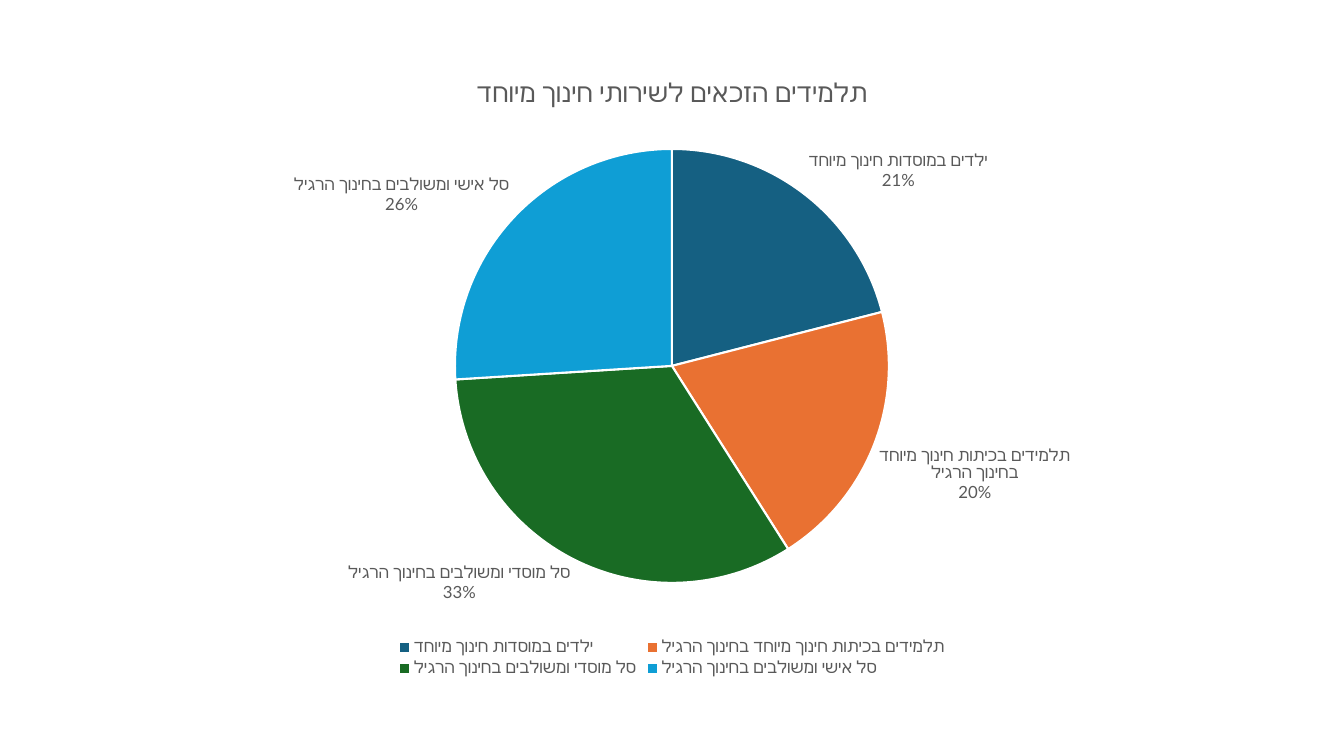
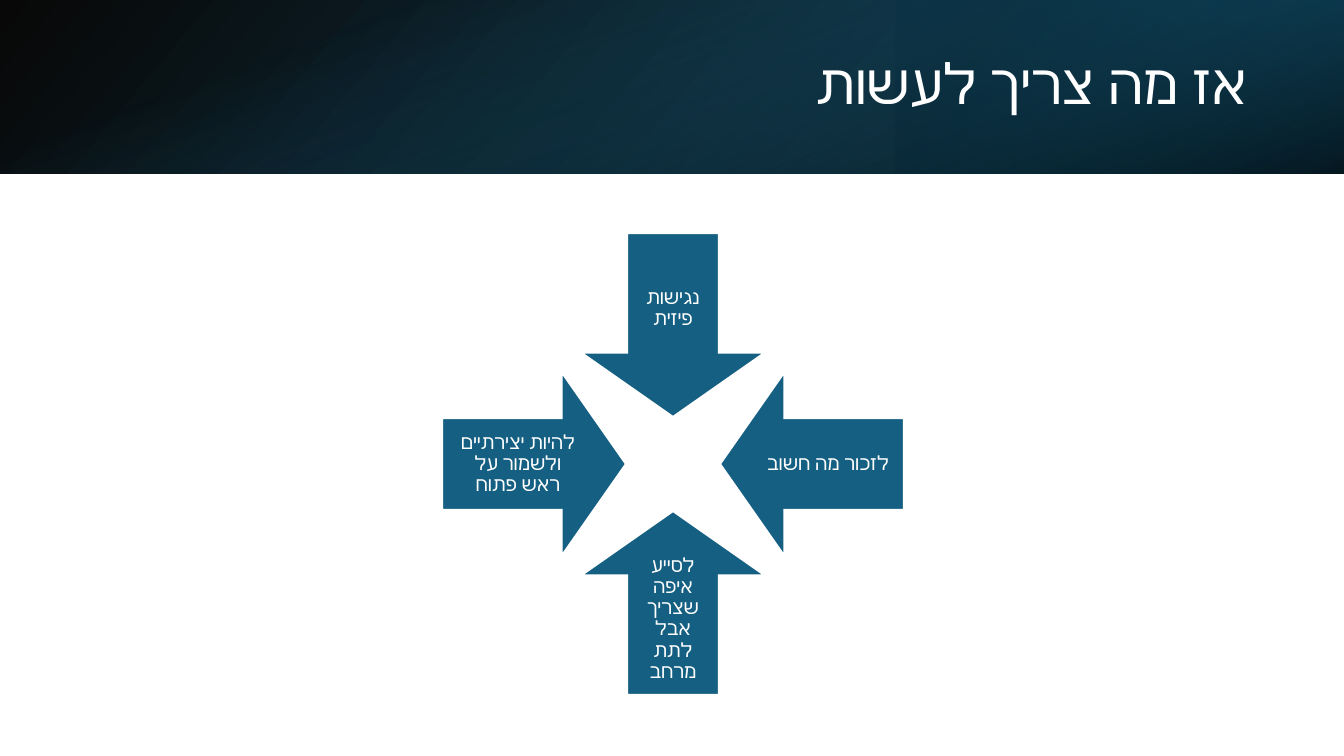
from pptx import Presentation
from pptx.chart.data import CategoryChartData
from pptx.dml.color import RGBColor
from pptx.enum.chart import XL_CHART_TYPE, XL_LABEL_POSITION, XL_LEGEND_POSITION
from pptx.enum.lang import MSO_LANGUAGE_ID
from pptx.enum.shapes import MSO_SHAPE
from pptx.enum.text import MSO_ANCHOR, MSO_AUTO_SIZE, PP_ALIGN
from pptx.oxml import parse_xml
from pptx.oxml.ns import nsdecls, qn
from pptx.util import Emu, Pt

FONT = "Lato"
TEAL, WHITE, GREY = "156082", "FFFFFF", "595959"


def px(*nums):
    """Turn pixels (100.8 to the inch) into EMU."""
    return [Emu(round(n * 914400 / 100.8)) for n in nums]


def hue(code):
    return RGBColor.from_string(code)


deck = Presentation()
deck.slide_width, deck.slide_height = px(1344, 756)

# Slide 1: pie chart
slide = deck.slides.add_slide(deck.slide_layouts[6])
head = "תלמידים הזכאים לשירותי חינוך מיוחד"
parts = [
    ("ילדים במוסדות חינוך מיוחד", 21, TEAL),
    ("תלמידים בכיתות חינוך מיוחד בחינוך הרגיל", 20, "E97132"),
    ("סל מוסדי ומשולבים בחינוך הרגיל", 33, "196B24"),
    ("סל אישי ומשולבים בחינוך הרגיל", 26, "0F9ED5"),
]
data = CategoryChartData()
data.categories = [name for name, _, _ in parts]
data.add_series(head, [value for _, value, _ in parts])
LEFT, TOP, WIDE, HIGH = 93, 56, 1159, 625
chart = slide.shapes.add_chart(
    XL_CHART_TYPE.PIE, *px(LEFT, TOP, WIDE, HIGH), data).chart

chart.has_title = chart.has_legend = True
chart.chart_title.include_in_layout = False
title = chart.chart_title.text_frame
title.text = head
chart.legend.position = XL_LEGEND_POSITION.BOTTOM
chart.legend.include_in_layout = False

plot = chart.plots[0]
plot.vary_by_categories = True
pie = plot.series[0]
for i, (_, _, code) in enumerate(parts):
    slice_ = pie.points[i].format
    slice_.fill.solid()
    slice_.fill.fore_color.rgb = hue(code)
    slice_.line.color.rgb = hue(WHITE)
    slice_.line.width = Pt(1.5)

# Place of the pie within the chart
place = {"x": (455 - LEFT) / WIDE, "y": (149 - TOP) / HIGH,
         "w": 434 / WIDE, "h": 434 / HIGH}
sizes = "".join(f'<c:{key} val="{value:.4f}"/>' for key, value in place.items())
area = chart.element.chart.plotArea
for old in area.findall(qn("c:layout")):
    area.remove(old)
area.insert(0, parse_xml(
    f'<c:layout {nsdecls("c")}><c:manualLayout><c:layoutTarget val="inner"/>'
    f'<c:xMode val="edge"/><c:yMode val="edge"/>{sizes}'
    f'</c:manualLayout></c:layout>'))

# Labels: name and share on separate lines
labels = pie.data_labels
marks = {"show_category_name": True, "show_percentage": True,
         "show_value": False, "show_legend_key": False,
         "position": XL_LABEL_POSITION.OUTSIDE_END}
for key, value in marks.items():
    setattr(labels, key, value)
for last in chart.element.iter(qn("c:showBubbleSize")):
    last.addnext(parse_xml(f"<c:separator {nsdecls('c')}>\n</c:separator>"))

fonts = [(chart.font, 10, "000000"), (labels.font, 12, GREY),
         (chart.legend.font, 12, GREY),
         (title.paragraphs[0].runs[0].font, 18.6, GREY)]
for font, size, code in fonts:
    font.name, font.size, font.bold = FONT, Pt(size), False
    font.color.rgb = hue(code)

# Slide 2: header band of three layered gradients
slide = deck.slides.add_slide(deck.slide_layouts[5])
shapes = slide.shapes
bands = [  # box, turn, flip, angle, stops of (place, colour, opacity)
    ((0, 0, 1344, 174), 0, 1, 140, [(0, "000000", 96), (100, "104862", 96)]),
    ((896, 0, 448, 174), 180, 1, 320, [(19, "0B3041", 68), (100, TEAL, 79)]),
    ((585, -585, 174, 1344), 90, 0, 340, [(23, TEAL, 0), (100, "000000", 74)]),
]
for box, turn, flip, angle, stops in bands:
    band = shapes.add_shape(MSO_SHAPE.RECTANGLE, *px(*box))
    band.rotation = turn
    band.shadow.inherit = False
    band.line.fill.background()
    props = band.element.spPr
    props.xfrm.set("flipH", str(flip))
    steps = "".join(
        f'<a:gs pos="{spot * 1000}"><a:srgbClr val="{code}">'
        f'<a:alpha val="{alpha * 1000}"/></a:srgbClr></a:gs>'
        for spot, code, alpha in stops)
    band.fill.gradient()
    props.replace(props.find(qn("a:gradFill")), parse_xml(
        f'<a:gradFill {nsdecls("a")} rotWithShape="1"><a:gsLst>{steps}'
        f'</a:gsLst><a:lin ang="{angle * 60000}" scaled="0"/></a:gradFill>'))

# Title lies above the band
title = shapes.title
title.left, title.top, title.width, title.height = px(151, 38, 1107, 97)
shapes.element.append(title.element)
texts = [(title, "אז מה צריך לעשות", 40, PP_ALIGN.RIGHT)]

# Four arrows pointing at the middle, each with its text box
MID_X, MID_Y, SIDE, REACH, SHIFT = 673, 464, 184, 139, 155
arrows = [  # direction from the middle, turn, words
    (0, -1, 0, "נגישות פיזית"),
    (1, 0, 90, "לזכור מה חשוב"),
    (0, 1, 180, "לסייע איפה שצריך אבל לתת מרחב"),
    (-1, 0, 270, "להיות יצירתיים ולשמור על ראש פתוח"),
]
group = shapes.add_group_shape().shapes
for dx, dy, turn, words in arrows:
    arrow = group.add_shape(MSO_SHAPE.DOWN_ARROW, *px(
        MID_X + dx * REACH - SIDE / 2, MID_Y + dy * REACH - SIDE / 2,
        SIDE, SIDE))
    arrow.rotation = turn
    arrow.adjustments[0], arrow.adjustments[1] = 0.5, 0.35
    arrow.shadow.inherit = False
    arrow.fill.solid()
    arrow.fill.fore_color.rgb = hue(TEAL)
    arrow.line.color.rgb = hue(WHITE)
    arrow.line.width = Pt(1.5)
    arrow.element.spPr.find(qn("a:ln")).append(
        parse_xml(f'<a:miter {nsdecls("a")} lim="800000"/>'))

    wide, high = (152, 92) if dx else (92, 152)
    box = group.add_textbox(*px(
        MID_X + dx * SHIFT - wide / 2, MID_Y + dy * SHIFT - high / 2,
        wide, high))
    for edge in ("left", "top", "right", "bottom"):
        setattr(box.text_frame, f"margin_{edge}", px(11)[0])
    texts.append((box, words, 14, PP_ALIGN.CENTER))

# Shared right-to-left text style
frame_style = {"word_wrap": True, "auto_size": MSO_AUTO_SIZE.NONE,
               "vertical_anchor": MSO_ANCHOR.MIDDLE}
for shape, words, size, align in texts:
    frame = shape.text_frame
    frame.text = words
    for key, value in frame_style.items():
        setattr(frame, key, value)
    para = frame.paragraphs[0]
    para.alignment, para.line_spacing = align, 0.9
    font = para.runs[0].font
    font.color.rgb = hue(WHITE)
    style = {"name": FONT, "size": Pt(size), "bold": False,
             "language_id": MSO_LANGUAGE_ID.HEBREW}
    for key, value in style.items():
        setattr(font, key, value)
    para._p.get_or_add_pPr().set("rtl", "1")

deck.save("out.pptx")
